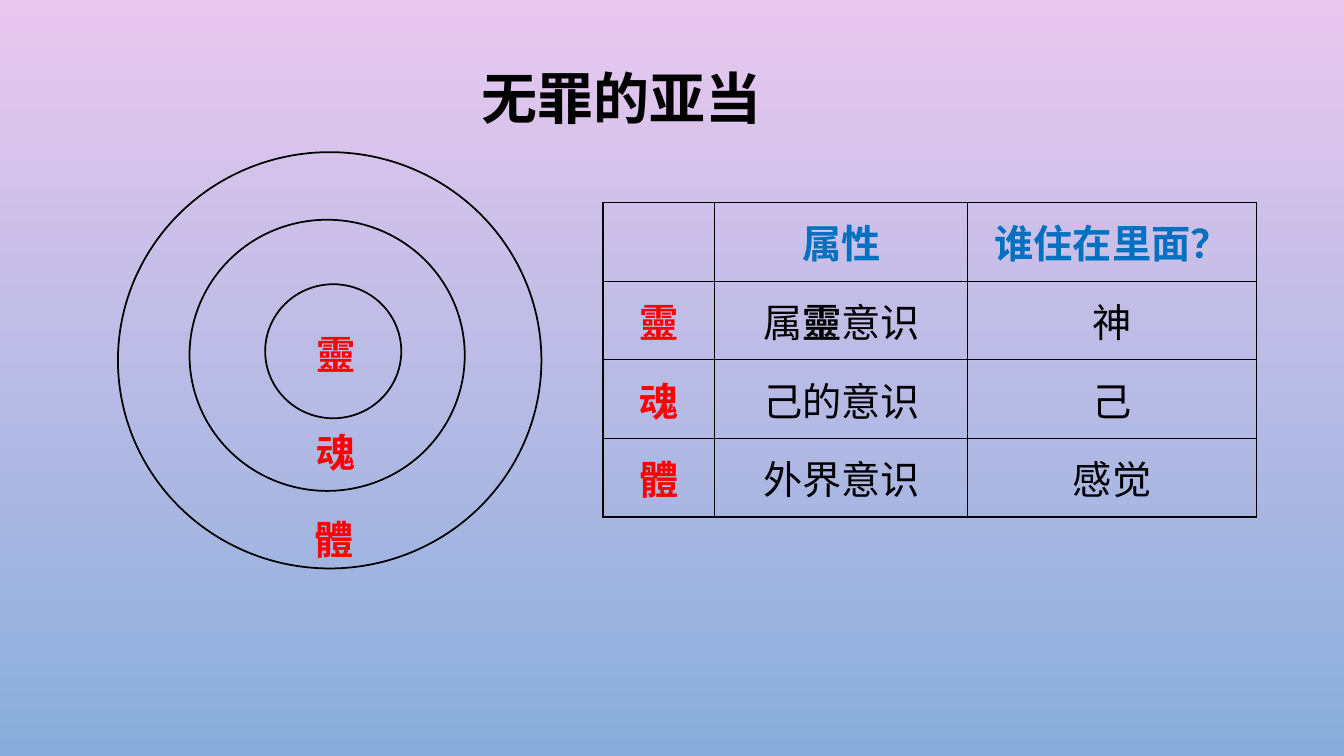
import pptx
import pptx.dml.color
import pptx.enum.shapes
import pptx.enum.text
import pptx.oxml
import pptx.oxml.ns
import pptx.util
from pptx.util import Inches

BLACK, RED, BLUE = "000000", "FF0000", "0070C0"
MIDDLE = pptx.enum.text.MSO_ANCHOR.MIDDLE
CENTER = pptx.enum.text.PP_ALIGN.CENTER


def rgb(value):
    return pptx.dml.color.RGBColor.from_string(value)


def add_run(para, text, color, bold, size=28):
    span = para.add_run()
    span.text = text
    span.font.name = "Calibri"
    span.font.size = pptx.util.Pt(size)
    span.font.bold = bold
    span.font.color.rgb = rgb(color)


deck = pptx.Presentation()
deck.slide_width, deck.slide_height = Inches(13.33), Inches(7.5)
page = deck.slides.add_slide(deck.slide_layouts[5])

# Background gradient, running from top to bottom
backdrop = page.background.fill
backdrop.gradient()
backdrop.gradient_angle = 270
for stop, color in zip(backdrop.gradient_stops, ("E9C8EF", "89AEDB")):
    stop.color.rgb = rgb(color)

# Title
title = page.shapes.title
title.left, title.top = Inches(0.5), Inches(0.31)
title.width, title.height = Inches(11.33), Inches(1.39)
title.text_frame.vertical_anchor = MIDDLE
heading = title.text_frame.paragraphs[0]
heading.alignment = CENTER
heading.line_spacing = 0.9
add_run(heading, "无罪的亚当", BLACK, True, 40)

# Nested circles, from inner to outer
diagram = page.shapes.add_group_shape()
circles = [(2.63, 2.82, 1.35, 1.33), (1.88, 2.18, 2.73, 2.69), (1.17, 1.51, 4.2, 4.13)]
for place in circles:
    circle = diagram.shapes.add_shape(
        pptx.enum.shapes.MSO_SHAPE.OVAL, *[Inches(value) for value in place])
    circle.shadow.inherit = False
    circle.fill.background()
    circle.line.color.rgb = rgb(BLACK)
    circle.line.width = pptx.util.Pt(1.25)

# Circle labels
for text, left, top in [("靈", 3.04, 3.23), ("體", 3.02, 5.06), ("魂", 3.04, 4.2)]:
    box = diagram.shapes.add_textbox(Inches(left), Inches(top), Inches(0.52), Inches(0.51))
    box.text_frame.word_wrap = True
    add_run(box.text_frame.paragraphs[0], text, RED, True)

# Table: each cell is a list of (text, colour, bold) runs
rows = [
    [[], [("属性", BLUE, True)], [("谁住在里面？", BLUE, True)]],
    [[("靈", RED, True)],
     [("属", BLACK, False), ("靈", BLACK, True), ("意识", BLACK, False)],
     [("神", BLACK, False)]],
    [[("魂", RED, True)], [("己的意识", BLACK, False)], [("己", BLACK, False)]],
    [[("體", RED, True)], [("外界意识", BLACK, False)], [("感觉", BLACK, False)]],
]
table = page.shapes.add_table(
    4, 3, Inches(5.98), Inches(2.01), Inches(6.48), Inches(3.12)).table
table.first_row = False
table.horz_banding = False
for column, width in zip(table.columns, (1.11, 2.51, 2.86)):
    column.width = Inches(width)

for row_index, row in enumerate(rows):
    table.rows[row_index].height = Inches(0.78)
    for column_index, runs in enumerate(row):
        cell = table.cell(row_index, column_index)
        cell.vertical_anchor = MIDDLE
        para = cell.text_frame.paragraphs[0]
        para.alignment = CENTER
        for text, color, bold in runs:
            add_run(para, text, color, bold)
        # Cell borders go ahead of the fill
        properties = cell._tc.get_or_add_tcPr()
        for side in ("lnL", "lnR", "lnT", "lnB"):
            properties.append(pptx.oxml.parse_xml(
                f'<a:{side} {pptx.oxml.ns.nsdecls("a")} w="12700"><a:solidFill>'
                f'<a:srgbClr val="{BLACK}"/></a:solidFill></a:{side}>'))
        cell.fill.background()

deck.save("out.pptx")
